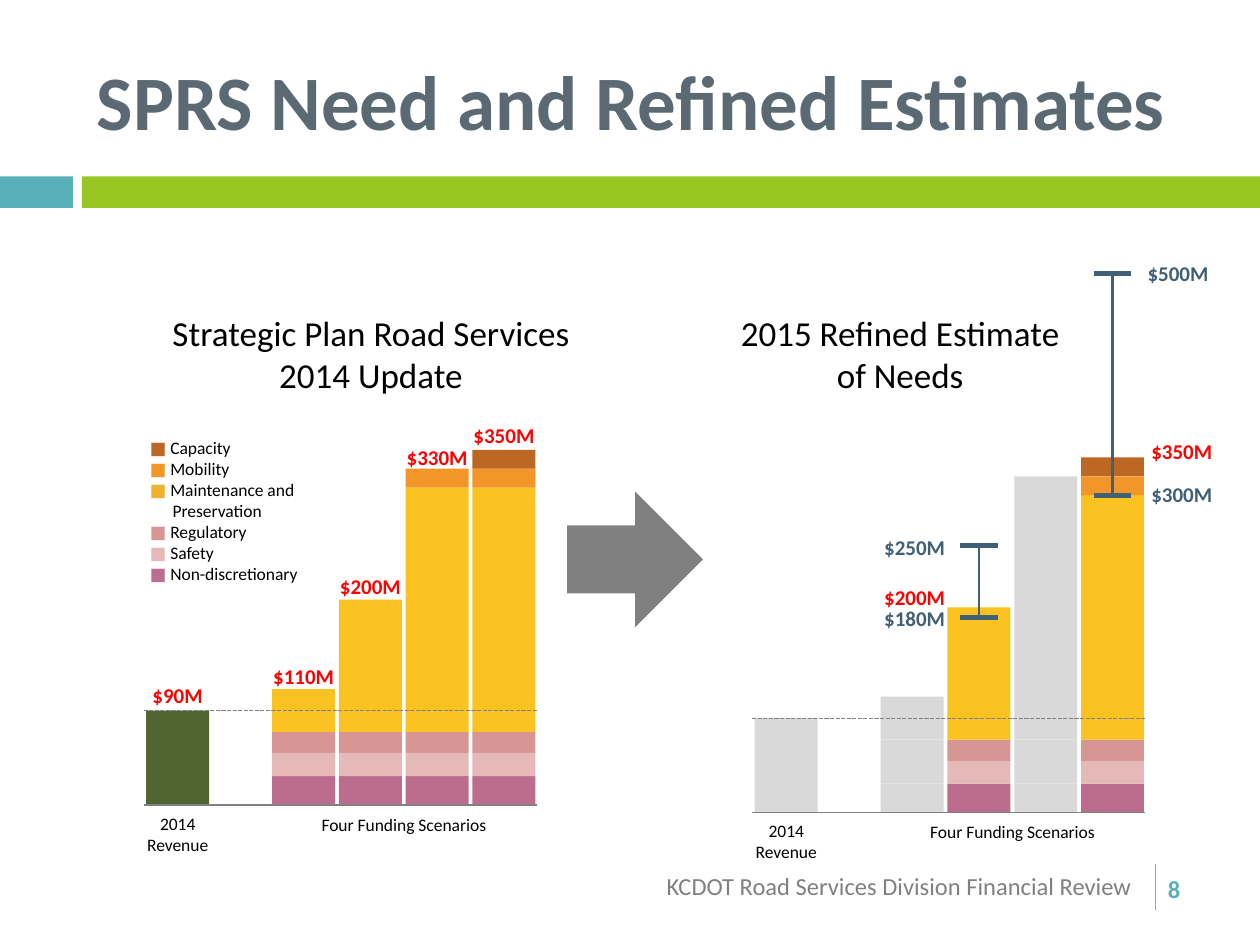
import pptx
import pptx.dml.color
import pptx.enum.dml
import pptx.enum.shapes
import pptx.enum.text
import pptx.oxml.ns
import pptx.util
from lxml import etree

Inches = pptx.util.Inches
Pt = pptx.util.Pt
SHAPES = pptx.enum.shapes.MSO_SHAPE
ALIGN = pptx.enum.text.PP_ALIGN
ANCHOR = pptx.enum.text.MSO_ANCHOR

COLORS = {
    "teal": "59B0B9", "green": "98C723", "slate": "5B6973", "gray": "808080",
    "black": "000000", "red": "FF0000", "navy": "3F6075", "muted": "D9D9D9",
    "revenue": "516530", "nondiscretionary": "BC6C8D", "safety": "E5B9B7",
    "regulatory": "D79694", "maintenance": "FBC321", "mobility": "F39629",
    "capacity": "BC6723", "maintenance key": "EFB22D",
}
BAR_WIDTH, BAR_STEP = 0.5, 0.53
REVENUE_OFFSET, SCENARIO_OFFSET = 0.02, 1.02
AXIS_WIDTH, REVENUE_HEIGHT = 3.12, 0.75
BASE_LAYERS = [("nondiscretionary", 0.23), ("safety", 0.18), ("regulatory", 0.17)]
SCENARIOS = [
    BASE_LAYERS + [("maintenance", 0.17), ("maintenance", 0.17)],
    BASE_LAYERS + [("maintenance", 1.05)],
    BASE_LAYERS + [("maintenance", 1.94), ("mobility", 0.15)],
    BASE_LAYERS + [("maintenance", 1.94), ("mobility", 0.15), ("capacity", 0.15)],
]
LEGEND = [
    ("capacity", "Capacity"), ("mobility", "Mobility"),
    ("maintenance key", "Maintenance and Preservation"),
    ("regulatory", "Regulatory"), ("safety", "Safety"),
    ("nondiscretionary", "Non-discretionary"),
]


def rgb(name):
    return pptx.dml.color.RGBColor.from_string(COLORS[name])


def add_block(page, left, top, width, height, color, kind=SHAPES.RECTANGLE):
    shape = page.shapes.add_shape(
        kind, Inches(left), Inches(top), Inches(width), Inches(height))
    shape.shadow.inherit = False
    shape.fill.solid()
    shape.fill.fore_color.rgb = rgb(color)
    shape.line.fill.background()


def add_line(page, x1, y1, x2, y2, color, weight=0.79, dashed=False):
    line = page.shapes.add_connector(
        pptx.enum.shapes.MSO_CONNECTOR.STRAIGHT,
        Inches(x1), Inches(y1), Inches(x2), Inches(y2))
    line.line.color.rgb = rgb(color)
    line.line.width = Pt(weight)
    if dashed:
        line.line.dash_style = pptx.enum.dml.MSO_LINE.SQUARE_DOT
    etree.SubElement(line._element.spPr, pptx.oxml.ns.qn("a:effectLst"))


def add_frame(page, left, top, width, height, inset=None, anchor=ANCHOR.TOP, wrap=True):
    box = page.shapes.add_textbox(
        Inches(left), Inches(top), Inches(width), Inches(height))
    frame = box.text_frame
    frame.word_wrap = wrap
    frame.vertical_anchor = anchor
    if inset is not None:
        frame.margin_left = frame.margin_right = Inches(inset)
        frame.margin_top = frame.margin_bottom = Inches(inset)
    return frame


def add_span(para, text, size, color, bold=False):
    span = para.add_run()
    span.text = text
    span.font.name = "Calibri"
    span.font.size = Pt(size)
    span.font.bold = bold
    span.font.color.rgb = rgb(color)


def add_text(page, text, left, top, width, height, size=10, color="black",
             bold=False, align=ALIGN.CENTER, **frame_format):
    para = add_frame(page, left, top, width, height, **frame_format).paragraphs[0]
    para.alignment = align
    add_span(para, text, size, color, bold)


def add_amount(page, text, left, top, color="red"):
    add_text(page, text, left, top, BAR_WIDTH, 0.2, size=12, color=color,
             bold=True, inset=0, wrap=False)


def add_header(page):
    add_block(page, 0, 1.4, 0.58, 0.25, "teal")
    add_block(page, 0.65, 1.4, 9.35, 0.25, "green")
    add_text(page, "SPRS Need and Refined Estimates", 0.67, 0.25, 8.92, 1.08,
             size=44, color="slate", bold=True, align=ALIGN.LEFT,
             anchor=ANCHOR.MIDDLE)


def add_footer(page):
    add_text(page, "KCDOT Road Services Division Financial Review",
             2.83, 6.83, 6.25, 0.4, size=14, color="gray", align=ALIGN.RIGHT,
             anchor=ANCHOR.MIDDLE)
    add_line(page, 9.17, 6.86, 9.17, 7.22, "green")
    add_text(page, "8", 9.17, 6.89, 0.67, 0.34, size=14, color="teal",
             bold=True, align=ALIGN.LEFT)


def scenario_left(left, index):
    return left + SCENARIO_OFFSET + index * BAR_STEP


def add_funding_bars(page, left, base, highlighted, revenue_color):
    """Stack the scenario bars on a baseline; bars not highlighted are muted."""
    for index, layers in enumerate(SCENARIOS):
        top = base
        for name, height in layers:
            top -= height
            add_block(page, scenario_left(left, index), top, BAR_WIDTH, height,
                      name if index in highlighted else "muted")
    revenue_top = base - REVENUE_HEIGHT
    add_block(page, left + REVENUE_OFFSET, revenue_top, BAR_WIDTH,
              REVENUE_HEIGHT, revenue_color)
    add_line(page, left, base, left + AXIS_WIDTH, base, "gray")
    add_line(page, left, revenue_top, left + AXIS_WIDTH, revenue_top, "gray",
             dashed=True)
    add_text(page, "Four Funding Scenarios", left + SCENARIO_OFFSET,
             base + 0.02, 2.09, 0.27)
    add_text(page, "2014 Revenue", left - 0.12, base + 0.01, 0.78, 0.44)


def add_legend(page, left, top, width, height):
    frame = add_frame(page, left, top, width, height, inset=0.05)
    for index, (color, label) in enumerate(LEGEND):
        para = frame.paragraphs[0] if index == 0 else frame.add_paragraph()
        if color == "maintenance key":
            properties = para._p.get_or_add_pPr()
            properties.set("marL", str(Inches(0.18)))
            properties.set("indent", str(Inches(-0.18)))
        add_span(para, "■ ", 10, color)
        add_span(para, label, 10, "black")


def add_range(page, center, top, bottom):
    for y in (top, bottom):
        add_line(page, center - 0.15, y, center + 0.15, y, "navy", 3)
    add_line(page, center, top, center, bottom, "navy", 1.5)


def add_plan_panel(page, left, base):
    add_funding_bars(page, left, base, {0, 1, 2, 3}, "revenue")
    add_legend(page, left, base - 2.97, 1.51, 1.3)
    add_text(page, "Strategic Plan Road Services 2014 Update",
             left - 0.1, base - 3.97, 3.81, 0.77, size=20)
    add_amount(page, "$90M", left + REVENUE_OFFSET, base - 0.97)
    amounts = [("$110M", 1.12), ("$200M", 1.84), ("$330M", 2.86), ("$350M", 3.04)]
    for index, (amount, rise) in enumerate(amounts):
        add_amount(page, amount, scenario_left(left, index), base - rise)


def add_refined_panel(page, left, base):
    add_funding_bars(page, left, base, {1, 3}, "muted")
    add_text(page, "2015 Refined Estimate of Needs",
             left - 0.19, base - 4.03, 2.73, 0.77, size=20)
    for index, top, bottom in ((1, 4.33, 4.9), (3, 2.17, 3.93)):
        add_range(page, scenario_left(left, index) + BAR_WIDTH / 2, top, bottom)
    for amount, x, y, color in (
            ("$200M", 1.04, 1.81, "red"), ("$250M", 1.04, 2.21, "navy"),
            ("$180M", 1.04, 1.64, "navy"), ("$350M", 3.16, 2.97, "red"),
            ("$500M", 3.13, 4.38, "navy"), ("$300M", 3.16, 2.63, "navy")):
        add_amount(page, amount, left + x, base - y, color)


def main():
    deck = pptx.Presentation()
    deck.slide_width, deck.slide_height = Inches(10), Inches(7.5)
    page = deck.slides.add_slide(deck.slide_layouts[6])
    add_header(page)
    add_footer(page)
    add_block(page, 4.5, 3.9, 1.08, 1.08, "gray", SHAPES.RIGHT_ARROW)
    add_plan_panel(page, 1.14, 6.39)
    add_refined_panel(page, 5.97, 6.45)
    deck.save("out.pptx")


if __name__ == "__main__":
    main()
